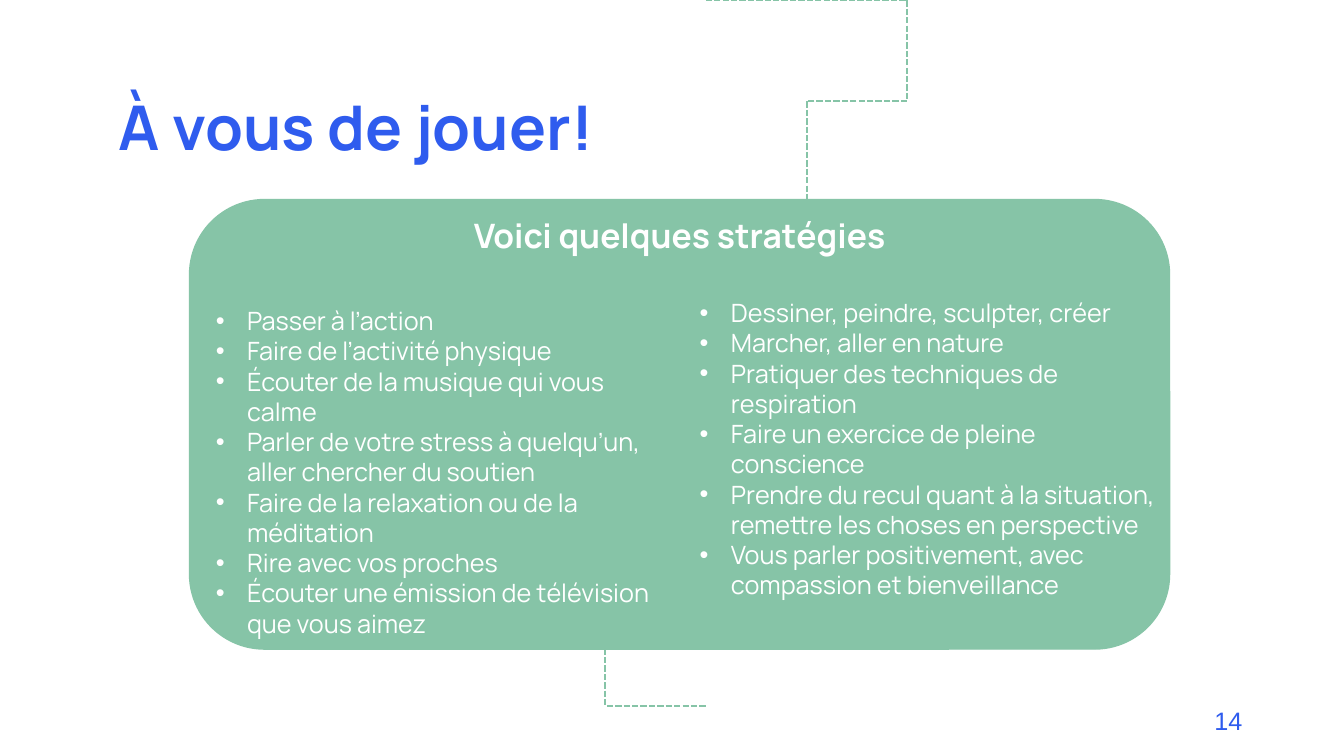
from lxml import etree
from pptx import Presentation
from pptx.dml.color import RGBColor
from pptx.enum.dml import MSO_LINE_DASH_STYLE as Dash
from pptx.enum.shapes import MSO_SHAPE as Preset
from pptx.enum.text import MSO_ANCHOR as Anchor, MSO_AUTO_SIZE as AutoSize, PP_ALIGN as Align
from pptx.oxml.ns import qn
from pptx.util import Inches, Pt

COLORS = {"green": "86C4A7", "blue": "2F5CEE", "white": "FFFFFF"}
FONT = "Manrope"

TRAIL_START = (6.66, 0)
TRAIL_CURVES = [
    [(7.9, 0.16), (9.14, 0.32), (8.99, 0.83)],
    [(8.84, 1.34), (6.17, 2.09), (5.75, 3.07)],
    [(5.34, 4.06), (5.92, 5.4), (6.51, 6.75)],
]
LEFT_STRATEGIES = [
    "Passer à l’action",
    "Faire de l’activité physique",
    "Écouter de la musique qui vous calme",
    "Parler de votre stress à quelqu’un, aller chercher du soutien",
    "Faire de la relaxation ou de la méditation",
    "Rire avec vos proches",
    "Écouter une émission de télévision que vous aimez",
]
RIGHT_STRATEGIES = [
    "Dessiner, peindre, sculpter, créer",
    "Marcher, aller en nature",
    "Pratiquer des techniques de respiration",
    "Faire un exercice de pleine\vconscience",
    "Prendre du recul quant à la situation, remettre les choses en perspective",
    "Vous parler positivement, avec compassion et bienveillance",
]


def color(name):
    return RGBColor.from_string(COLORS[name])


def style(paragraph, size, color_name, align=Align.LEFT, bold=False, font=FONT):
    paragraph.alignment = align
    paragraph.space_before = Pt(0)
    paragraph.font.name = font
    paragraph.font.size = Pt(size)
    paragraph.font.bold = bold
    paragraph.font.color.rgb = color(color_name)


def place(shape, left, top, width, height):
    shape.left, shape.top = Inches(left), Inches(top)
    shape.width, shape.height = Inches(width), Inches(height)


def bezier_points(start, curve, steps=30):
    """Return points along one cubic curve, without its start."""
    points = []
    for step in range(1, steps + 1):
        t = step / steps
        weights = ((1 - t) ** 3, 3 * t * (1 - t) ** 2, 3 * t * t * (1 - t), t ** 3)
        points.append(tuple(
            sum(w * p[axis] for w, p in zip(weights, [start, *curve]))
            for axis in (0, 1)))
    return points


def add_trail(slide):
    points, start = [], TRAIL_START
    for curve in TRAIL_CURVES:
        points += bezier_points(start, curve)
        start = curve[-1]
    builder = slide.shapes.build_freeform(*TRAIL_START, scale=Inches(1))
    builder.add_line_segments(points, close=False)
    trail = builder.convert_to_shape()
    trail.shadow.inherit = False
    trail.fill.background()
    trail.line.color.rgb = color("green")
    trail.line.width = Pt(1.5)
    trail.line.dash_style = Dash.SQUARE_DOT


def add_panel(slide):
    panel = slide.shapes.add_shape(
        Preset.ROUNDED_RECTANGLE, Inches(1.88), Inches(1.98), Inches(9.72), Inches(4.46))
    panel.shadow.inherit = False
    panel.fill.solid()
    panel.fill.fore_color.rgb = color("green")
    panel.line.color.rgb = color("green")
    panel.line.width = Pt(1)


def add_label(slide, text, box, *text_style, **options):
    label = slide.shapes.add_textbox(*map(Inches, box))
    label.text_frame.word_wrap = True
    label.text_frame.text = text
    style(label.text_frame.paragraphs[0], *text_style, **options)


def set_title(slide, text):
    title = slide.shapes.title
    place(title, 1.08, 0.57, 11.5, 1.45)
    frame = title.text_frame
    frame.text = text
    frame.auto_size = AutoSize.NONE
    frame.vertical_anchor = Anchor.MIDDLE
    frame.paragraphs[0].line_spacing = 0.9
    style(frame.paragraphs[0], 44, "blue", bold=True)


def add_bullet(paragraph):
    props = paragraph._p.get_or_add_pPr()
    props.set("marL", str(Inches(0.31)))
    props.set("indent", str(Inches(-0.31)))
    etree.SubElement(props, qn("a:buFont"), typeface="Arial")
    etree.SubElement(props, qn("a:buChar"), char="•")


def fill_list(slide, body, items, box):
    """Fill a body placeholder with bullets and bring it in front of the panel."""
    slide.shapes._spTree.append(body._element)
    place(body, *box)
    frame = body.text_frame
    frame.text = "\n".join(items)
    frame.auto_size = AutoSize.NONE
    frame.vertical_anchor = Anchor.TOP
    for paragraph in frame.paragraphs:
        add_bullet(paragraph)
        style(paragraph, 18, "white")


def main():
    deck = Presentation()
    deck.slide_width, deck.slide_height = Inches(13.33), Inches(7.5)
    slide = deck.slides.add_slide(deck.slide_layouts.get_by_name("Two Content"))
    left_body, right_body = slide.placeholders[1], slide.placeholders[2]

    add_trail(slide)
    add_label(slide, "14", (9.42, 6.95, 3, 0.4), 18, "blue", Align.RIGHT, font="Arial")
    add_panel(slide)
    add_label(slide, "Voici quelques stratégies", (1.88, 2.08, 9.72, 0.56),
              24, "white", Align.CENTER, bold=True)
    fill_list(slide, left_body, LEFT_STRATEGIES, (2.04, 2.98, 4.64, 3.43))
    fill_list(slide, right_body, RIGHT_STRATEGIES, (6.84, 2.9, 4.89, 3.13))
    set_title(slide, "À vous de jouer!")
    deck.save("out.pptx")


if __name__ == "__main__":
    main()
